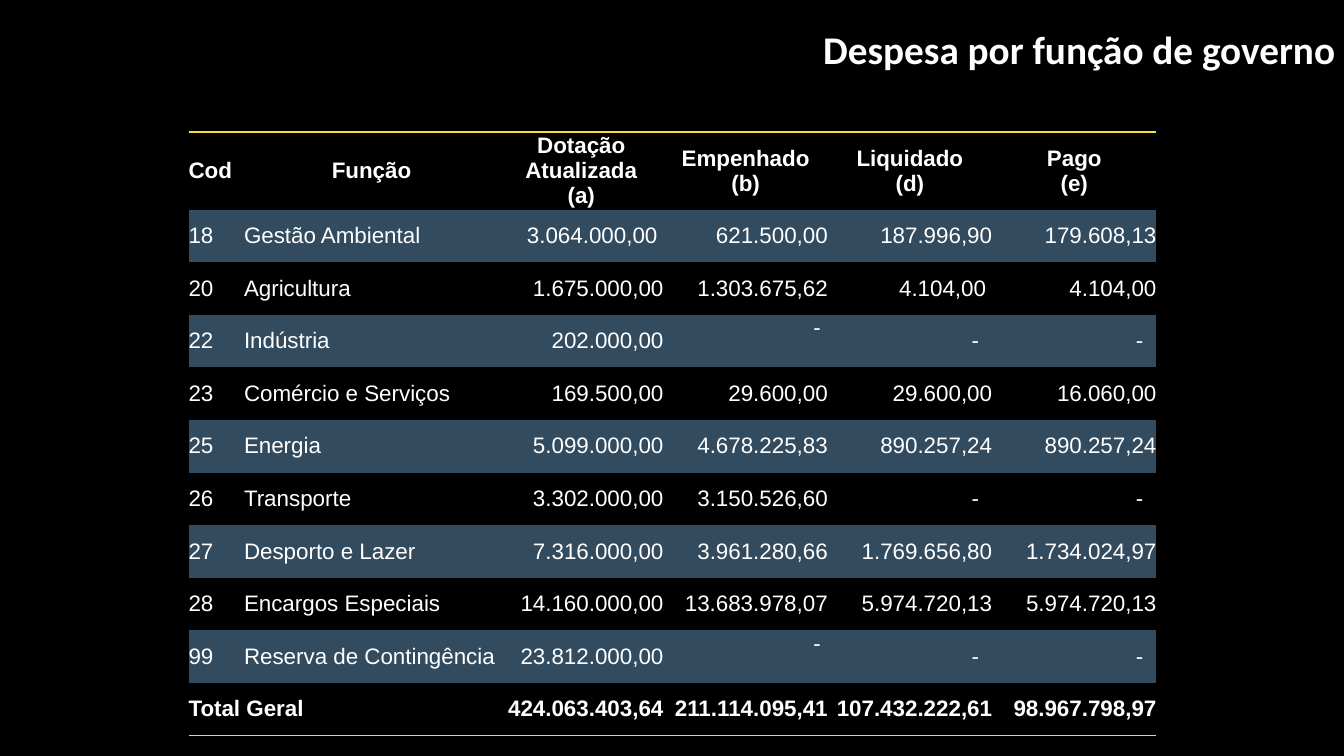
from lxml.etree import SubElement
from pptx import Presentation
from pptx.dml.color import RGBColor
from pptx.enum.text import MSO_ANCHOR as Anchor, MSO_AUTO_SIZE as AutoSize, PP_ALIGN as Align
from pptx.oxml.ns import qn
from pptx.util import Inches, Pt

# Content
TITLE = "Despesa por função de governo"
HEADER = [
    ["Cod"], ["Função"], ["Dotação Atualizada", "(a)"],
    ["Empenhado", "(b)"], ["Liquidado", "(d)"], ["Pago", "(e)"],
]
EXPENSES = [
    ("18", "Gestão Ambiental", "3.064.000,00", "621.500,00", "187.996,90", "179.608,13"),
    ("20", "Agricultura", "1.675.000,00", "1.303.675,62", "4.104,00", "4.104,00"),
    ("22", "Indústria", "202.000,00", "-", "-", "-"),
    ("23", "Comércio e Serviços", "169.500,00", "29.600,00", "29.600,00", "16.060,00"),
    ("25", "Energia", "5.099.000,00", "4.678.225,83", "890.257,24", "890.257,24"),
    ("26", "Transporte", "3.302.000,00", "3.150.526,60", "-", "-"),
    ("27", "Desporto e Lazer", "7.316.000,00", "3.961.280,66", "1.769.656,80", "1.734.024,97"),
    ("28", "Encargos Especiais", "14.160.000,00", "13.683.978,07", "5.974.720,13", "5.974.720,13"),
    ("99", "Reserva de Contingência", "23.812.000,00", "-", "-", "-"),
]
TOTAL = ("Total Geral", "", "424.063.403,64", "211.114.095,41", "107.432.222,61", "98.967.798,97")

# Look and grid, in inches
BLACK = RGBColor(0x00, 0x00, 0x00)
WHITE = RGBColor(0xFF, 0xFF, 0xFF)
BAND = RGBColor(0x32, 0x4B, 0x5F)
YELLOW = RGBColor(0xF4, 0xDE, 0x3A)
PLAIN_STYLE = "{2D5ABB26-0587-4C30-8999-92F81FD0307C}"
WIDTH, HEIGHT = 13.33, 7.5
COLUMNS = [0.55, 2.53] + [1.63] * 4
HEADER_HEIGHT, TABLE_HEIGHT = 0.77, 5.99
EMPENHADO = 3
DASH_INSET, RAISED_INSET, RAISED_LIFT = 0.13, 0.07, 0.26
NUDGED = {(1, 2): 0.06, (2, 4): 0.06}


def add_span(para, text, font, size, bold):
    span = para.add_run()
    span.text = text
    span.font.name = font
    span.font.size = Pt(size)
    span.font.bold = bold
    span.font.color.rgb = WHITE


def write_cell(cell, lines, align, bold):
    cell.vertical_anchor = Anchor.MIDDLE
    cell.margin_left = cell.margin_right = cell.margin_top = cell.margin_bottom = 0
    frame = cell.text_frame
    for index, line in enumerate(lines):
        para = frame.add_paragraph() if index else frame.paragraphs[0]
        para.alignment = align
        add_span(para, line, "Arial", 16, bold)


def add_border(cell, side):
    properties = cell._tc.get_or_add_tcPr()
    line = SubElement(properties, qn(side), w=str(Pt(1)))
    fill = SubElement(line, qn("a:solidFill"))
    SubElement(fill, qn("a:srgbClr"), val=str(YELLOW))
    properties.insert(0, line)


def place_number(cell, row, column, text):
    # Dashes and a few figures stand off the right edge
    if text == "-" and column == EMPENHADO:
        cell.margin_right = Inches(RAISED_INSET)
        cell.margin_bottom = Inches(RAISED_LIFT)
    elif text == "-":
        cell.margin_right = Inches(DASH_INSET)
    else:
        cell.margin_right = Inches(NUDGED.get((row, column), 0))


def add_title(page):
    title = page.shapes.title
    title.left, title.top = Inches(4.91), Inches(0.2)
    title.width, title.height = Inches(8.43), Inches(0.57)
    frame = title.text_frame
    frame.auto_size = AutoSize.NONE
    frame.vertical_anchor = Anchor.MIDDLE
    para = frame.paragraphs[0]
    para.alignment = Align.RIGHT
    add_span(para, TITLE, "Calibri", 28, True)


def add_expense_table(page):
    rows = [HEADER] + [[[text] for text in row] for row in EXPENSES + [TOTAL]]
    last = len(rows) - 1
    graphic = page.shapes.add_table(
        len(rows), len(COLUMNS), Inches(1.87), Inches(1.31),
        Inches(sum(COLUMNS)), Inches(TABLE_HEIGHT))
    for style in graphic.element.iter(qn("a:tableStyleId")):
        style.text = PLAIN_STYLE
    table = graphic.table
    table.first_row = table.horz_banding = False
    for column, width in zip(table.columns, COLUMNS):
        column.width = Inches(width)
    for index, row in enumerate(table.rows):
        row.height = Inches((TABLE_HEIGHT - HEADER_HEIGHT) / last if index else HEADER_HEIGHT)
    table.cell(last, 0).merge(table.cell(last, 1))

    for r, row in enumerate(rows):
        for c, lines in enumerate(row):
            cell = table.cell(r, c)
            if not cell.is_spanned:
                align = Align.LEFT if c == 0 or (c == 1 and r) else Align.RIGHT if r else Align.CENTER
                write_cell(cell, lines, align, r in (0, last))
                if r and c > 1:
                    place_number(cell, r, c, lines[0])
            # Odd rows are banded
            if r % 2:
                cell.fill.solid()
                cell.fill.fore_color.rgb = BAND
            else:
                cell.fill.background()
            # Yellow rules close the table above and below
            if r in (0, last):
                add_border(cell, "a:lnB" if r else "a:lnT")


def main():
    deck = Presentation()
    deck.slide_width, deck.slide_height = Inches(WIDTH), Inches(HEIGHT)
    page = deck.slides.add_slide(deck.slide_layouts[5])
    page.background.fill.solid()
    page.background.fill.fore_color.rgb = BLACK
    add_title(page)
    add_expense_table(page)
    deck.save("out.pptx")


if __name__ == "__main__":
    main()
